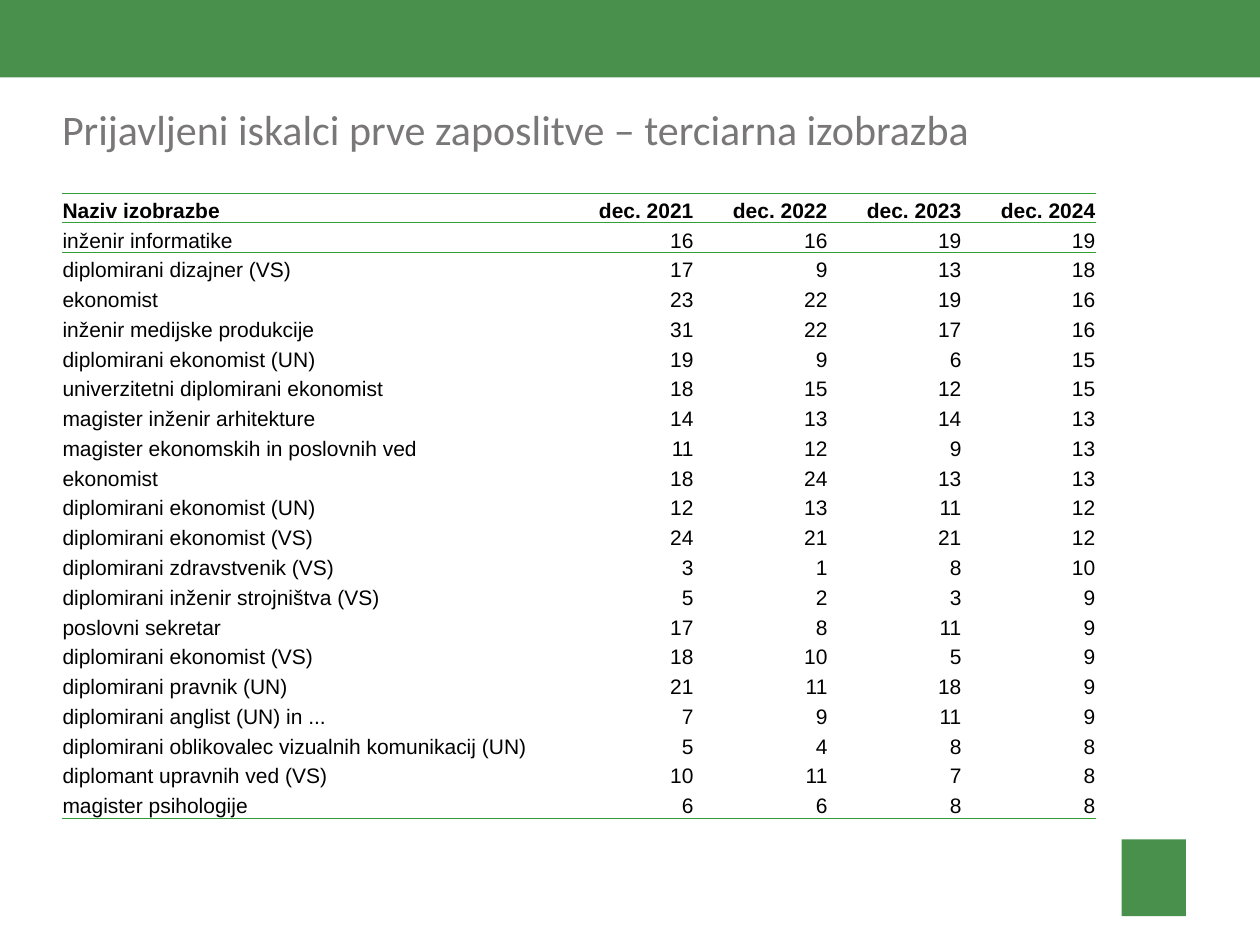
import pptx
import pptx.dml.color
import pptx.enum.shapes
import pptx.enum.text
import pptx.util
from pptx.util import Cm
from lxml import etree

GREEN = pptx.dml.color.RGBColor(0x49, 0x90, 0x4D)
RULE_GREEN = pptx.dml.color.RGBColor(0x33, 0x9E, 0x35)
GREY = pptx.dml.color.RGBColor(0x79, 0x77, 0x77)
BLACK = pptx.dml.color.RGBColor(0, 0, 0)

DRAWING = "http://schemas.openxmlformats.org/drawingml/2006/main"
NO_STYLE = "{2D5ABB26-0587-4C30-8999-92F81FD0307C}"

HEADER = ("Naziv izobrazbe", "dec. 2021", "dec. 2022", "dec. 2023", "dec. 2024")
SEEKERS = [
    ("inženir informatike", 16, 16, 19, 19),
    ("diplomirani dizajner (VS)", 17, 9, 13, 18),
    ("ekonomist", 23, 22, 19, 16),
    ("inženir medijske produkcije", 31, 22, 17, 16),
    ("diplomirani ekonomist (UN)", 19, 9, 6, 15),
    ("univerzitetni diplomirani ekonomist", 18, 15, 12, 15),
    ("magister inženir arhitekture", 14, 13, 14, 13),
    ("magister ekonomskih in poslovnih ved", 11, 12, 9, 13),
    ("ekonomist", 18, 24, 13, 13),
    ("diplomirani ekonomist (UN)", 12, 13, 11, 12),
    ("diplomirani ekonomist (VS)", 24, 21, 21, 12),
    ("diplomirani zdravstvenik (VS)", 3, 1, 8, 10),
    ("diplomirani inženir strojništva (VS)", 5, 2, 3, 9),
    ("poslovni sekretar", 17, 8, 11, 9),
    ("diplomirani ekonomist (VS)", 18, 10, 5, 9),
    ("diplomirani pravnik (UN)", 21, 11, 18, 9),
    ("diplomirani anglist (UN) in ...", 7, 9, 11, 9),
    ("diplomirani oblikovalec vizualnih komunikacij (UN)", 5, 4, 8, 8),
    ("diplomant upravnih ved (VS)", 10, 11, 7, 8),
    ("magister psihologije", 6, 6, 8, 8),
]


def add_green_box(page, left, top, width, height):
    box = page.shapes.add_shape(
        pptx.enum.shapes.MSO_SHAPE.RECTANGLE, left, top, width, height)
    box.shadow.inherit = False
    box.fill.solid()
    box.fill.fore_color.rgb = GREEN
    box.line.fill.background()


def place_title(page, text, left, top, width, height):
    title = page.shapes.title
    title.left, title.top, title.width, title.height = left, top, width, height
    frame = title.text_frame
    frame.margin_left = frame.margin_top = frame.margin_right = frame.margin_bottom = 0
    frame.vertical_anchor = pptx.enum.text.MSO_ANCHOR.TOP
    frame.auto_size = pptx.enum.text.MSO_AUTO_SIZE.NONE
    frame.text = text
    para = frame.paragraphs[0]
    para.alignment = pptx.enum.text.PP_ALIGN.LEFT
    para.font.name = "Calibri"
    para.font.size = pptx.util.Pt(24)
    para.font.color.rgb = GREY


def add_rule(cell, side):
    properties = cell._tc.get_or_add_tcPr()
    line = etree.SubElement(properties, f"{{{DRAWING}}}ln{side}", w=str(pptx.util.Pt(0.5)))
    fill = etree.SubElement(line, f"{{{DRAWING}}}solidFill")
    etree.SubElement(fill, f"{{{DRAWING}}}srgbClr", val=str(RULE_GREEN))


def fill_cell(cell, value, bold, alignment):
    cell.fill.background()
    cell.margin_left = cell.margin_top = cell.margin_right = Cm(0.02)
    cell.margin_bottom = 0
    cell.vertical_anchor = pptx.enum.text.MSO_ANCHOR.BOTTOM
    cell.text = str(value)
    para = cell.text_frame.paragraphs[0]
    para.alignment = alignment
    para.font.name = "Arial"
    para.font.size = pptx.util.Pt(12)
    para.font.bold = bold
    para.font.color.rgb = BLACK


def add_seekers_table(page, left, top, width, height):
    rows = [HEADER] + SEEKERS
    table = page.shapes.add_table(
        len(rows), len(HEADER), left, top, width, height).table
    table.first_row = table.horz_banding = False
    table._tbl.tblPr.find(f"{{{DRAWING}}}tableStyleId").text = NO_STYLE
    year_width = Cm(2.7)
    table.columns[0].width = width - year_width * (len(HEADER) - 1)
    for column in range(1, len(HEADER)):
        table.columns[column].width = year_width
    last = len(rows) - 1
    for row, values in enumerate(rows):
        table.rows[row].height = height // len(rows)
        for column, value in enumerate(values):
            cell = table.cell(row, column)
            if row in (0, 1):
                add_rule(cell, "T")
            if row in (0, last):
                add_rule(cell, "B")
            alignment = (pptx.enum.text.PP_ALIGN.RIGHT if column
                         else pptx.enum.text.PP_ALIGN.LEFT)
            fill_cell(cell, value, row == 0, alignment)


def main():
    deck = pptx.Presentation()
    deck.slide_width, deck.slide_height = Cm(25.4), Cm(19.05)
    page = deck.slides.add_slide(deck.slide_layouts[5])
    add_green_box(page, 0, Cm(-0.02), deck.slide_width, Cm(1.58))
    add_green_box(page, Cm(22.61), Cm(16.92), Cm(1.3), Cm(1.55))
    place_title(page, "Prijavljeni iskalci prve zaposlitve – terciarna izobrazba",
                Cm(1.25), Cm(2.08), Cm(23.52), Cm(1.8))
    add_seekers_table(page, Cm(1.24), Cm(3.89), Cm(20.86), Cm(12.62))
    deck.save("out.pptx")


if __name__ == "__main__":
    main()
